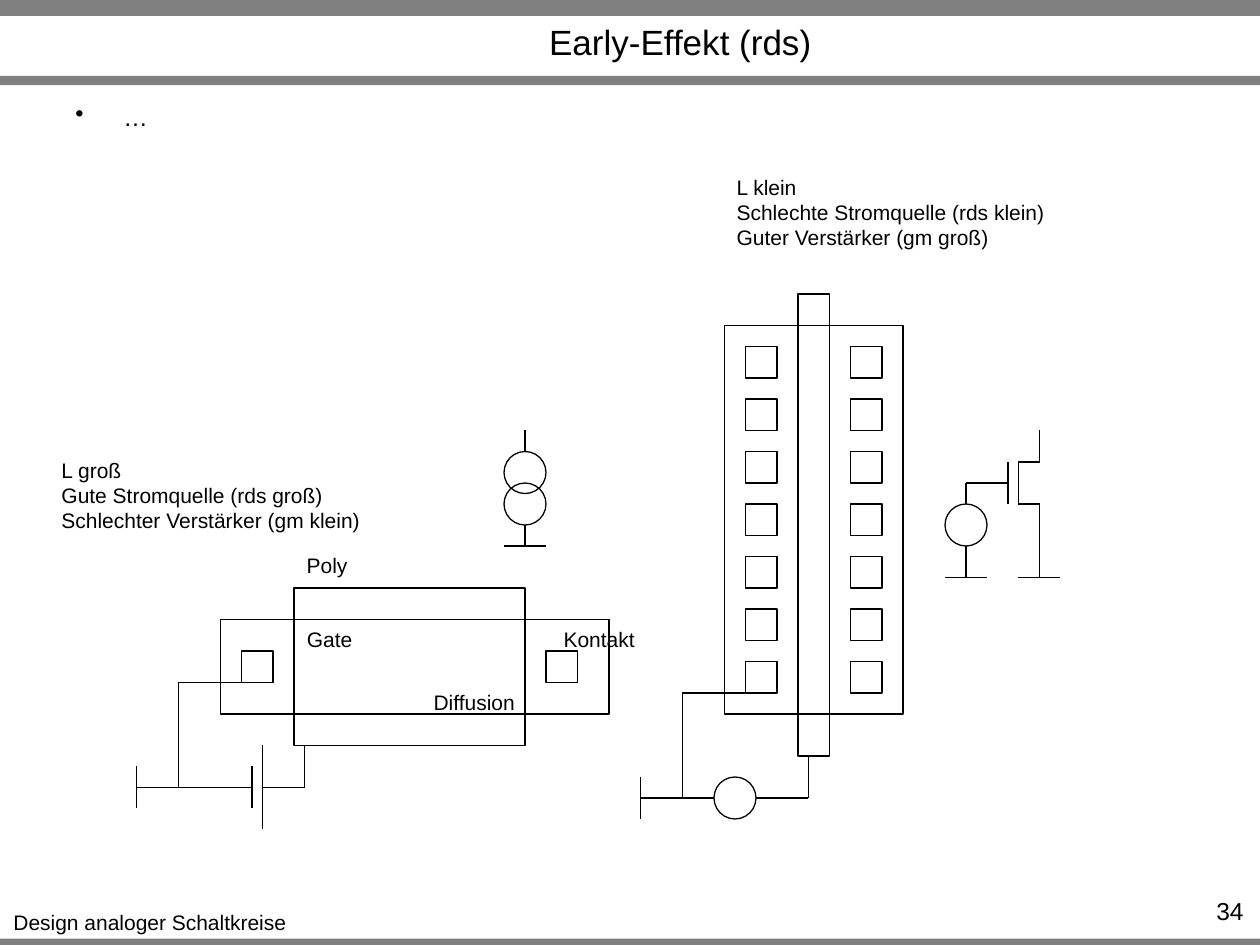
"""Build the slide on the Early effect with two transistor layouts and their circuits."""
from lxml import etree
from pptx import Presentation
from pptx import util as u
from pptx.dml.color import RGBColor
from pptx.enum import shapes, text
from pptx.oxml.ns import qn

BLACK, GREY = "000000", "808080"
GRID = u.Cm(2.54) // 12


def paint(fill, colour):
    fill.solid()
    fill.fore_color.rgb = RGBColor.from_string(colour)


def write(words, left, top, width, height, size=12, align="LEFT", anchor="TOP",
          wrap=False, bullet=None, indent=0.97):
    frame = slide.shapes.add_textbox(u.Cm(left), u.Cm(top), u.Cm(width), u.Cm(height)).text_frame
    frame.word_wrap = wrap
    frame.vertical_anchor = getattr(text.MSO_ANCHOR, anchor)
    frame.text = words
    for paragraph in frame.paragraphs:
        paragraph.alignment = getattr(text.PP_ALIGN, align)
        if bullet:
            props = paragraph._p.get_or_add_pPr()
            props.set("marL", str(u.Cm(indent)))
            props.set("indent", str(-u.Cm(indent)))
            etree.SubElement(props, qn("a:buChar")).set("char", bullet)
        for run in paragraph.runs:
            run.font.name = "Arial"
            run.font.size = u.Pt(size)
            paint(run.font.fill, BLACK)


deck = Presentation()
deck.slide_width, deck.slide_height = u.Cm(25.4), u.Cm(19.05)
slide = deck.slides.add_slide(deck.slide_layouts[6])

for top, height in [(18.92, 0.13), (0, 0.32), (1.53, 0.19)]:
    band = slide.shapes.add_shape(shapes.MSO_SHAPE.RECTANGLE, 0, u.Cm(top), deck.slide_width, u.Cm(height))
    band.shadow.inherit = False
    paint(band.fill, GREY)
    band.line.fill.background()

write("Design analoger Schaltkreise", 0, 18.21, 6.05, 0.76, align="CENTER")
write("Early-Effekt (rds)", 3.3, 0.36, 20.83, 0.97, size=20, align="CENTER", anchor="MIDDLE", wrap=True)
write("…", 1.27, 1.93, 22.86, 1.24, size=14, wrap=True, bullet="•")
write("34", 23.11, 17.93, 2.21, 0.61, size=14, align="RIGHT", wrap=True)

# Outlines and wires are given in twelfths of an inch.
long_layout = [(28, 56, 22, 15), (21, 59, 37, 9), (23, 62, 3, 3), (52, 62, 3, 3)]
short_layout = [(76, 28, 3, 44), (69, 31, 17, 37)]
contacts = [(x, 33 + 5 * row, 3, 3) for row in range(7) for x in (71, 81)]
sources = [(x, y, 4, 4) for x, y in [(68, 74), (48, 43), (48, 46), (90, 48)]]

for kind, outlines in [(shapes.MSO_SHAPE.RECTANGLE, long_layout + short_layout + contacts),
                       (shapes.MSO_SHAPE.OVAL, sources)]:
    for outline in outlines:
        part = slide.shapes.add_shape(kind, *(GRID * n for n in outline))
        part.shadow.inherit = False
        part.fill.background()
        paint(part.line.fill, BLACK)
        part.line.width = u.Pt(0.75)

long_wiring = [(17, 75, 24, 75), (24, 73, 24, 77), (25, 71, 25, 79), (25, 75, 29, 75), (29, 71, 29, 75),
               (23, 65, 17, 65), (17, 65, 17, 75), (13, 75, 20, 75), (13, 73, 13, 77)]
short_wiring = [(65, 76, 68, 76), (72, 76, 77, 76), (77, 72, 77, 76), (71, 66, 65, 66),
                (65, 66, 65, 76), (61, 76, 68, 76), (61, 74, 61, 78)]
current_source = [(50, 50, 50, 52), (48, 52, 52, 52), (50, 43, 50, 41)]
amplifier = [(92, 48, 92, 46), (94, 46, 92, 46), (92, 55, 92, 52), (90, 55, 94, 55),
             (97, 55, 101, 55), (99, 55, 99, 51)]
transistor = [(99, 48, 97, 48), (97, 48, 97, 44), (94, 46, 96, 46), (96, 48, 96, 44),
              (99, 44, 97, 44), (99, 44, 99, 41), (99, 51, 99, 48)]

for holder, wires in [(slide.shapes, long_wiring + short_wiring + current_source + amplifier),
                      (slide.shapes.add_group_shape().shapes, transistor)]:
    for ends in wires:
        wire = holder.add_connector(shapes.MSO_CONNECTOR.STRAIGHT, *(GRID * n for n in ends))
        paint(wire.line.fill, BLACK)
        wire.line.width = u.Pt(0.75)
        etree.SubElement(wire._element.spPr, qn("a:effectLst"))

write("L groß\nGute Stromquelle (rds groß)\nSchlechter Verstärker (gm klein)", 0.99, 9.1, 6.58, 1.8)
write("L klein\nSchlechte Stromquelle (rds klein)\nGuter Verstärker (gm groß)", 14.6, 3.39, 6.78, 1.8)
for label, left, top, width in [("Gate", 5.92, 12.5, 1.45), ("Poly", 5.92, 11.01, 1.35),
                                ("Diffusion", 8.48, 13.77, 2.16), ("Kontakt", 11.1, 12.5, 1.96)]:
    write(label, left, top, width, 0.76, align="CENTER")

deck.save("out.pptx")
